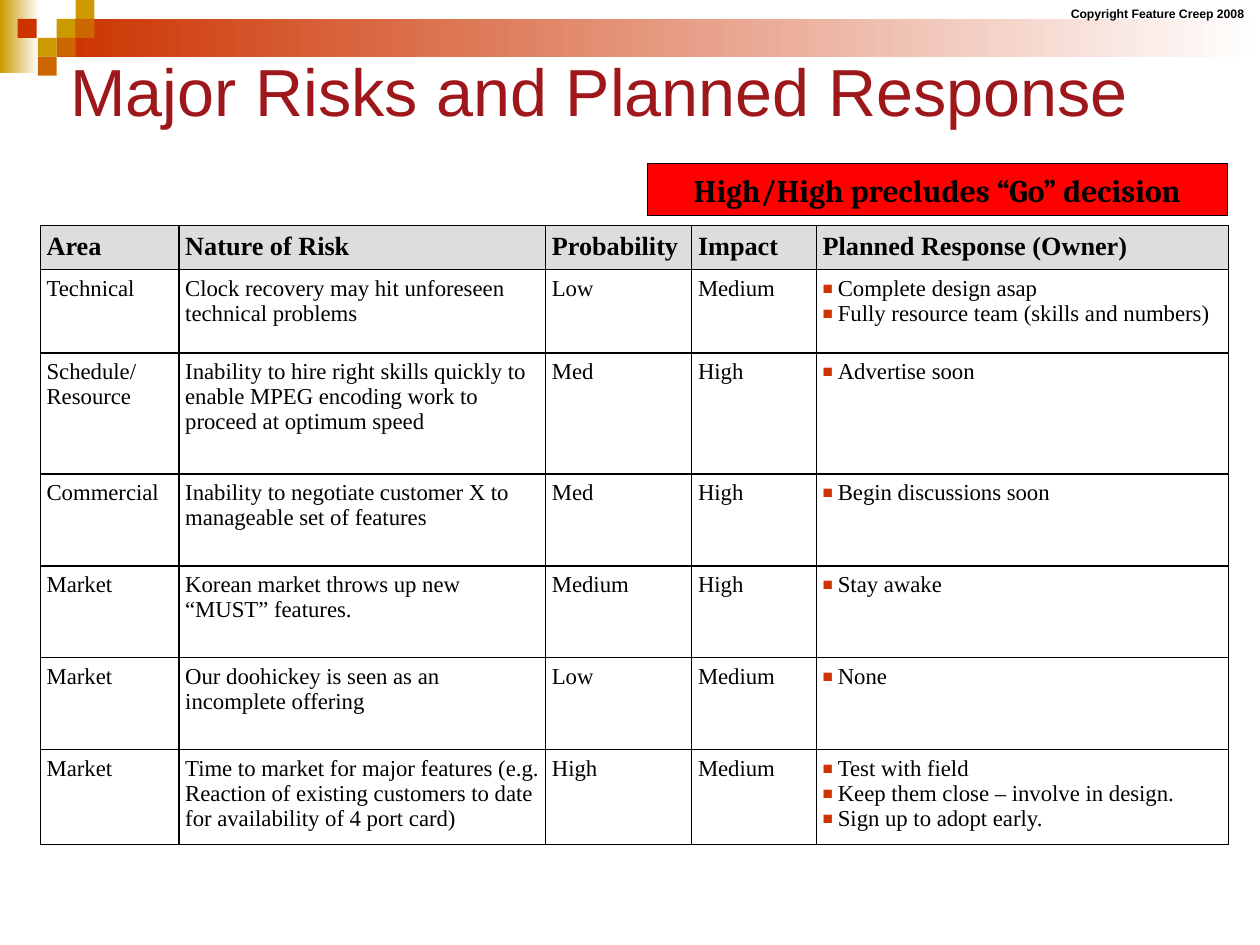
from lxml import etree
from pptx import Presentation
from pptx.dml.color import RGBColor
from pptx.enum.shapes import MSO_SHAPE
from pptx.enum.text import MSO_ANCHOR, PP_ALIGN
from pptx.oxml.ns import qn
from pptx.util import Inches, Pt

RECT = MSO_SHAPE.RECTANGLE
MIDDLE = MSO_ANCHOR.MIDDLE
LEFT, CENTER = PP_ALIGN.LEFT, PP_ALIGN.CENTER

BLACK = RGBColor(0x00, 0x00, 0x00)
WHITE = RGBColor(0xFF, 0xFF, 0xFF)
GRAY = RGBColor(0xDD, 0xDD, 0xDD)
RED = RGBColor(0xFF, 0x00, 0x00)
MAROON = RGBColor(0x9E, 0x17, 0x1B)
GOLD = RGBColor(0xCC, 0x99, 0x00)
ORANGE = RGBColor(0xCC, 0x66, 0x00)
RUST = RGBColor(0xCC, 0x33, 0x00)

SIDE = 0.15
SQUARES = [
    (0.45, 0.15, GOLD), (0.6, 0, GOLD), (0.6, 0.15, ORANGE),
    (0.3, 0.3, GOLD), (0.14, 0.15, RUST), (0.45, 0.3, ORANGE),
    (0.3, 0.45, ORANGE),
]

COLS = [1.1, 2.91, 1.16, 0.99, 3.27]
ROWS = [0.33, 0.66, 0.96, 0.73, 0.73, 0.73, 0.73]
HEADS = ["Area", "Nature of Risk", "Probability", "Impact",
         "Planned Response (Owner)"]
RISKS = [
    ("Technical", "Clock recovery may hit unforeseen technical problems",
     "Low", "Medium",
     ["Complete design asap", "Fully resource team (skills and numbers)"]),
    ("Schedule/ Resource",
     "Inability to hire right skills quickly to enable MPEG encoding work "
     "to proceed at optimum speed",
     "Med", "High", ["Advertise soon"]),
    ("Commercial",
     "Inability to negotiate customer X to manageable set of features",
     "Med", "High", ["Begin discussions soon"]),
    ("Market", "Korean market throws up new “MUST” features.",
     "Medium", "High", ["Stay awake"]),
    ("Market", "Our doohickey is seen as an incomplete offering",
     "Low", "Medium", ["None"]),
    ("Market",
     "Time to market for major features (e.g. Reaction of existing customers "
     "to date for availability of 4 port card)",
     "High", "Medium",
     ["Test with field", "Keep them close – involve in design.",
      "Sign up to adopt early."]),
]


def style(para, name, size, color=BLACK, bold=False):
    font = para.font
    font.name, font.size, font.bold = name, Pt(size), bold
    font.color.rgb = color


def add_rect(slide, x, y, w, h):
    rect = slide.shapes.add_shape(RECT, Inches(x), Inches(y),
                                  Inches(w), Inches(h))
    rect.shadow.inherit = False
    rect.line.fill.background()
    return rect


def add_fade(slide, x, y, w, h, color):
    """Add a bar that fades from color to white, left to right."""
    fill = add_rect(slide, x, y, w, h).fill
    fill.gradient()
    fill.gradient_angle = 0
    for stop, tone, place in zip(fill.gradient_stops, (color, WHITE), (0, 1)):
        stop.color.rgb = tone
        stop.position = place


def add_motif(slide):
    add_fade(slide, 0, 0, 0.31, 0.58, GOLD)
    add_fade(slide, 0.45, 0.15, 9.55, 0.3, RUST)
    for x, y, color in SQUARES:
        fill = add_rect(slide, x, y, SIDE, SIDE).fill
        fill.solid()
        fill.fore_color.rgb = color


def add_notice(slide):
    box = slide.shapes.add_textbox(Inches(8.4), 0, Inches(1.6), Inches(0.22))
    box.text_frame.word_wrap = False
    para = box.text_frame.paragraphs[0]
    para.text = "Copyright Feature Creep 2008"
    style(para, "Arial", 7, bold=True)


def set_title(slide):
    title = slide.shapes.title
    title.left, title.top = Inches(0.46), Inches(0.13)
    title.width, title.height = Inches(9.65), Inches(1.17)
    frame = title.text_frame
    frame.vertical_anchor = MIDDLE
    para = frame.paragraphs[0]
    para.text = "Major Risks and Planned Response"
    para.alignment = LEFT
    style(para, "Arial", 38, MAROON)


def add_bullet(para):
    props = para._p.get_or_add_pPr()
    props.set("marL", str(Inches(0.12)))
    props.set("indent", str(-Inches(0.12)))
    tint = etree.SubElement(props, qn("a:buClr"))
    etree.SubElement(tint, qn("a:srgbClr"), val=str(RUST))
    etree.SubElement(props, qn("a:buSzPct"), val="75000")
    etree.SubElement(props, qn("a:buFont"), typeface="Arial")
    etree.SubElement(props, qn("a:buChar"), char="■")


def add_border(cell):
    props = cell._tc.get_or_add_tcPr()
    for side in ("a:lnL", "a:lnR", "a:lnT", "a:lnB"):
        line = etree.SubElement(props, qn(side), w=str(Pt(1)))
        fill = etree.SubElement(line, qn("a:solidFill"))
        etree.SubElement(fill, qn("a:srgbClr"), val=str(BLACK))


def fill_cell(cell, content, head):
    """Fill a cell with one text, or with a list of bullet items."""
    listed = isinstance(content, list)
    cell.margin_left = cell.margin_right = Inches(0.05)
    cell.margin_top = cell.margin_bottom = Inches(0.05)
    add_border(cell)
    cell.fill.solid()
    cell.fill.fore_color.rgb = GRAY if head else WHITE
    cell.text = "\n".join(content) if listed else content
    for para in cell.text_frame.paragraphs:
        if listed:
            add_bullet(para)
        style(para, "Times New Roman", 15 if head else 13, bold=head)


def add_risks(slide):
    table = slide.shapes.add_table(
        len(ROWS), len(COLS), Inches(0.32), Inches(1.79),
        Inches(sum(COLS)), Inches(sum(ROWS))).table
    table.first_row = table.horz_banding = False
    for col, width in zip(table.columns, COLS):
        col.width = Inches(width)
    for row, height, items in zip(table.rows, ROWS, [HEADS, *RISKS]):
        row.height = Inches(height)
        for cell, content in zip(row.cells, items):
            fill_cell(cell, content, items is HEADS)


def add_banner(slide):
    box = add_rect(slide, 5.14, 1.3, 4.6, 0.41)
    box.fill.solid()
    box.fill.fore_color.rgb = RED
    box.line.color.rgb = BLACK
    box.line.width = Pt(0.75)
    box.text_frame.vertical_anchor = MIDDLE
    para = box.text_frame.paragraphs[0]
    para.text = "High/High precludes “Go” decision"
    para.alignment = CENTER
    style(para, "Cambria", 18, bold=True)


def main():
    deck = Presentation()
    deck.slide_width, deck.slide_height = Inches(10), Inches(7.5)
    slide = deck.slides.add_slide(deck.slide_layouts[5])
    add_motif(slide)
    add_notice(slide)
    set_title(slide)
    add_risks(slide)
    add_banner(slide)
    deck.save("out.pptx")


if __name__ == "__main__":
    main()
